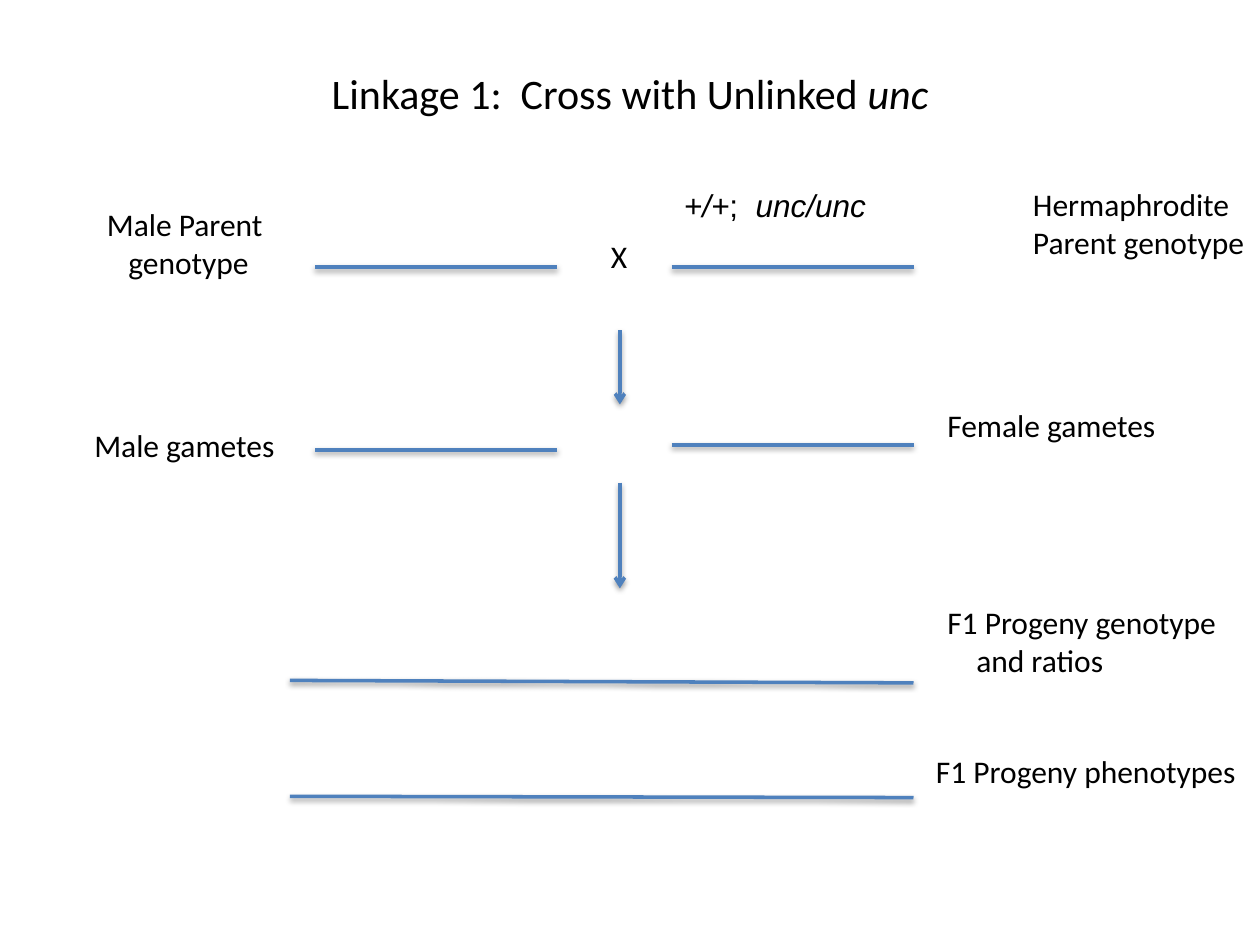
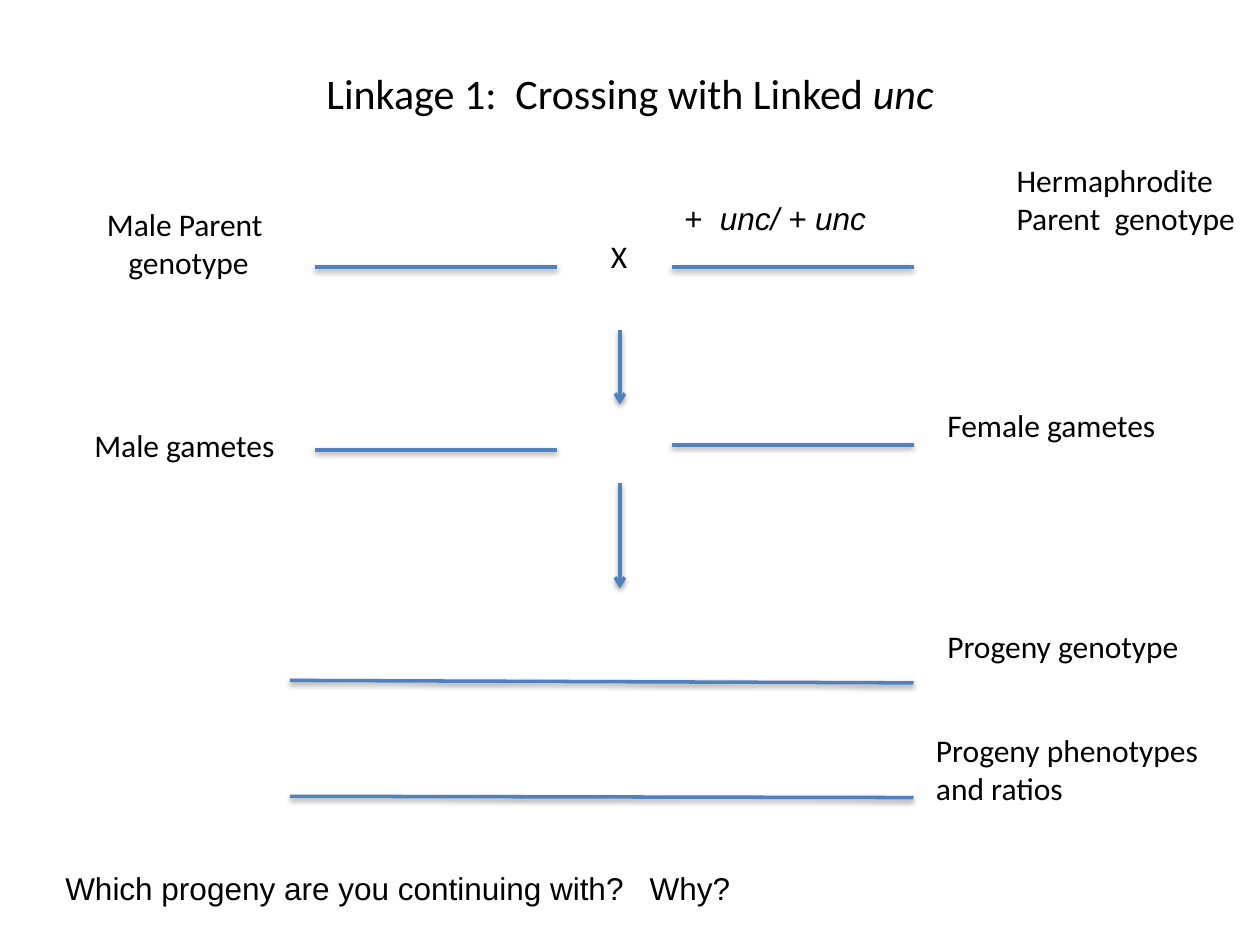
from lxml import etree
from pptx import Presentation
from pptx.dml.color import RGBColor
from pptx.enum.shapes import MSO_CONNECTOR
from pptx.enum.text import MSO_ANCHOR, MSO_AUTO_SIZE, PP_ALIGN
from pptx.oxml import parse_xml
from pptx.oxml.ns import qn
from pptx.util import Inches, Pt

STRAIGHT = MSO_CONNECTOR.STRAIGHT
MIDDLE = MSO_ANCHOR.MIDDLE
FIT_SHAPE = MSO_AUTO_SIZE.SHAPE_TO_FIT_TEXT
CENTER = PP_ALIGN.CENTER

BLACK = RGBColor(0x00, 0x00, 0x00)
BLUE = RGBColor(0x4F, 0x81, 0xBD)
HEADING_FONT, GENOTYPE_FONT = "Calibri", "Arial"
TITLE_SIZE, LABEL_SIZE = 24, 18
TITLE_ONLY_LAYOUT = 5
SHADOW = (
    '<a:effectLst xmlns:a="http://schemas.openxmlformats.org/drawingml/2006/main">'
    '<a:outerShdw blurRad="40000" dist="20000" dir="5400000" rotWithShape="0">'
    '<a:srgbClr val="000000"><a:alpha val="38000"/></a:srgbClr>'
    '</a:outerShdw></a:effectLst>'
)

MALE_SPAN, FEMALE_SPAN, PROGENY_SPAN = (2.5, 4.42), (5.33, 7.25), (2.3, 7.25)
BLANKS = [
    (MALE_SPAN, (2.12, 2.12)),
    (FEMALE_SPAN, (2.12, 2.12)),
    (MALE_SPAN, (3.57, 3.57)),
    (FEMALE_SPAN, (3.53, 3.53)),
    (PROGENY_SPAN, (5.4, 5.42)),
    (PROGENY_SPAN, (6.32, 6.33)),
]
ARROW_X = 4.92
ARROWS = [(2.62, 3.21), (3.83, 4.67)]

SHARED_LABELS = [
    ((0.75, 1.58, 1.45), ["Male Parent", "genotype"], 0.17),
    ((4.75, 1.83, 0.33), ["X"], 0),
    ((0.65, 3.33, 1.65), ["Male gametes"], 0),
    ((7.42, 3.17, 1.87), ["Female gametes"], 0),
]
CROSSES = [
    {
        "title": [("Linkage 1:  Cross with Unlinked ", False), ("unc", True)],
        "labels": [
            ((8.1, 1.42, 1.9), ["Hermaphrodite", "Parent genotype"], 0),
            ((7.42, 4.74, 2.36), ["F1 Progeny genotype", "and ratios"], 0.23),
            ((7.33, 5.92, 2.61), ["F1 Progeny phenotypes"], 0),
        ],
        "notes": [
            ((5.33, 1.43, 1.67), [("+/+", True), (";  ", False), ("unc/unc", True)]),
        ],
    },
    {
        "title": [("Linkage 1:  Crossing with Linked ", False), ("unc", True)],
        "labels": [
            ((7.97, 1.23, 2.01), ["Hermaphrodite", "Parent  genotype"], 0),
            ((7.42, 4.93, 2.06), ["Progeny genotype"], 0),
            ((7.33, 5.75, 2.31), ["Progeny phenotypes", "and ratios"], 0),
        ],
        "notes": [
            ((0.42, 6.85, 5.53), [("Which progeny are you continuing with?   Why?", False)]),
            ((5.33, 1.53, 1.67), [("+  unc/ + unc", True)]),
        ],
    },
]


def write_runs(paragraph, runs, font_name, size):
    for text, italic in runs:
        run = paragraph.add_run()
        run.text = text
        run.font.name = font_name
        run.font.size = Pt(size)
        run.font.italic = italic
        run.font.color.rgb = BLACK


def add_text(slide, place, lines, font_name, indent=0):
    left, top, width = place
    height = 0.4 + 0.31 * (len(lines) - 1)
    box = slide.shapes.add_textbox(*map(Inches, (left, top, width, height)))
    frame = box.text_frame
    frame.word_wrap = False
    frame.auto_size = FIT_SHAPE
    for index, runs in enumerate(lines):
        paragraph = frame.add_paragraph() if index else frame.paragraphs[0]
        write_runs(paragraph, runs, font_name, LABEL_SIZE)
        if index and indent:
            paragraph._p.get_or_add_pPr().set("marL", str(Inches(indent)))


def add_line(slide, start, end, arrow=False):
    line = slide.shapes.add_connector(STRAIGHT, *map(Inches, (*start, *end)))
    line.line.color.rgb = BLUE
    line.line.width = Pt(2)
    properties = line._element.spPr
    if arrow:
        etree.SubElement(properties.find(qn("a:ln")), qn("a:tailEnd"), type="arrow")
    properties.append(parse_xml(SHADOW))


def add_title(slide, runs):
    title = slide.shapes.title
    title.left, title.top, title.width, title.height = map(Inches, (0.5, 0.3, 9, 0.87))
    title.text_frame.vertical_anchor = MIDDLE
    paragraph = title.text_frame.paragraphs[0]
    paragraph.alignment = CENTER
    write_runs(paragraph, runs, HEADING_FONT, TITLE_SIZE)


def add_cross(presentation, cross):
    slide = presentation.slides.add_slide(presentation.slide_layouts[TITLE_ONLY_LAYOUT])
    add_title(slide, cross["title"])
    for place, lines, indent in SHARED_LABELS + cross["labels"]:
        add_text(slide, place, [[(line, False)] for line in lines], HEADING_FONT, indent)
    for (left, right), (left_y, right_y) in BLANKS:
        add_line(slide, (left, left_y), (right, right_y))
    for top, bottom in ARROWS:
        add_line(slide, (ARROW_X, top), (ARROW_X, bottom), arrow=True)
    for place, runs in cross["notes"]:
        add_text(slide, place, [runs], GENOTYPE_FONT)


def main():
    presentation = Presentation()
    presentation.slide_width = Inches(10)
    presentation.slide_height = Inches(7.5)
    for cross in CROSSES:
        add_cross(presentation, cross)
    presentation.save("out.pptx")


if __name__ == "__main__":
    main()
